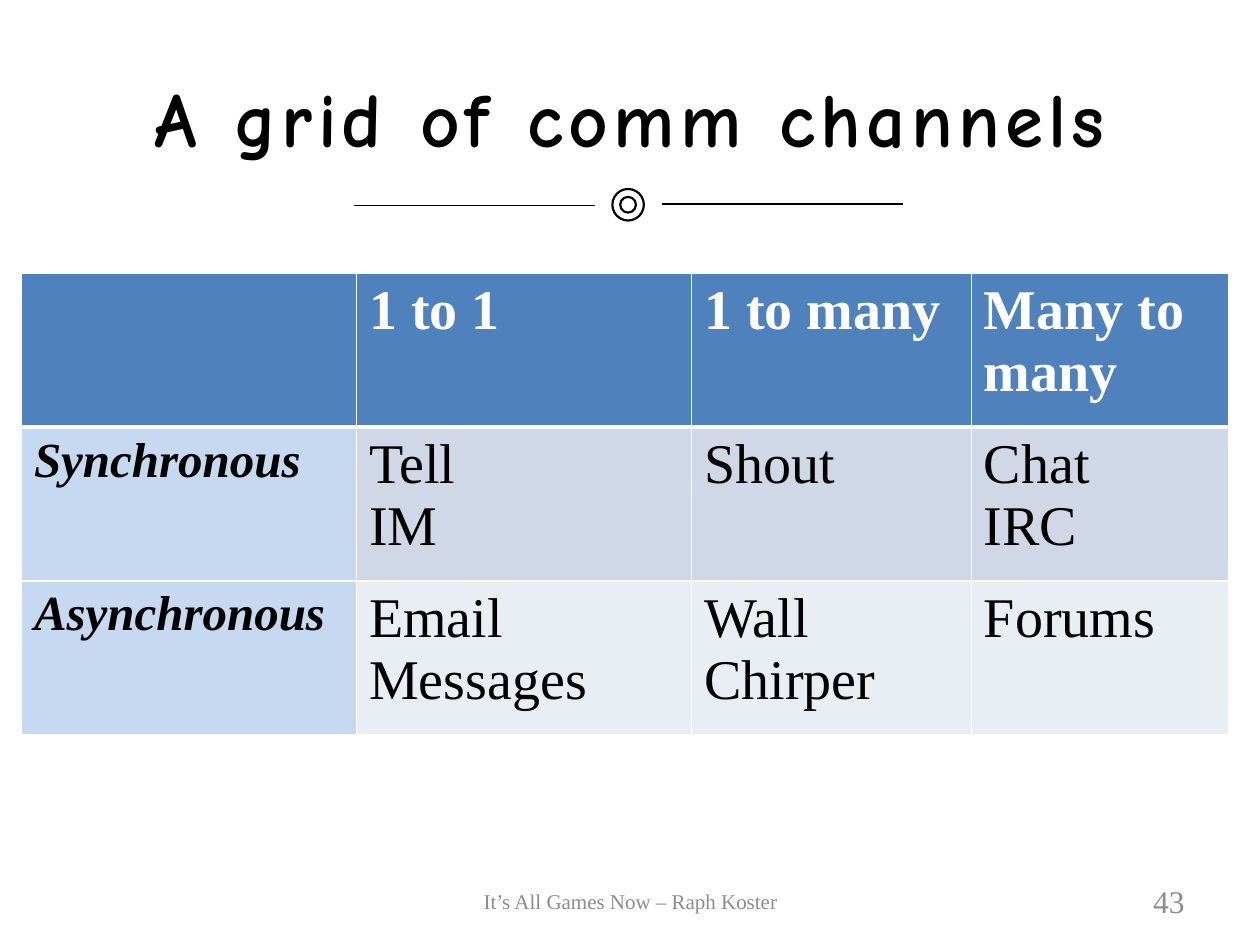
from dataclasses import dataclass

from lxml import etree
from pptx import Presentation
from pptx.dml.color import RGBColor
from pptx.enum import shapes, text
from pptx.oxml import ns
from pptx.util import Inches, Pt

BLACK = RGBColor(0x00, 0x00, 0x00)
WHITE = RGBColor(0xFF, 0xFF, 0xFF)
GREY = RGBColor(0x8C, 0x8C, 0x8C)
HEADER_BLUE = RGBColor(0x4F, 0x81, 0xBD)
LABEL_BLUE = RGBColor(0xC6, 0xD9, 0xF1)
BAND_DARK = RGBColor(0xD0, 0xD8, 0xE8)
BAND_LIGHT = RGBColor(0xE9, 0xED, 0xF4)
SERIF = "Times New Roman"

HEADER_FONT = {"name": SERIF, "size": Pt(32), "bold": True, "italic": False, "color": WHITE}
LABEL_FONT = {"name": SERIF, "size": Pt(28), "bold": True, "italic": True, "color": BLACK}
ENTRY_FONT = {"name": SERIF, "size": Pt(32), "bold": False, "italic": False, "color": BLACK}
TITLE_FONT = {"name": "Comic Neue", "size": Pt(44), "bold": True, "color": BLACK}

COLUMN_WIDTHS = (2.66, 2.66, 2.22, 2.04)
ROW_HEIGHT = 1.22
GRID = (
    ("", "1 to 1", "1 to many", "Many to many"),
    ("Synchronous", "Tell\nIM", "Shout", "Chat\nIRC"),
    ("Asynchronous", "Email\nMessages", "Wall\nChirper", "Forums"),
)
ROW_FILLS = (HEADER_BLUE, BAND_DARK, BAND_LIGHT)


@dataclass(frozen=True)
class Rule:
    left: float
    right: float
    top: float


@dataclass(frozen=True)
class FooterText:
    words: str
    left: float
    width: float
    size: int
    align: text.PP_ALIGN


RULES = (Rule(2.81, 4.72, 1.63), Rule(5.25, 7.17, 1.62))
FOOTERS = (
    FooterText("43", 7.17, 2.33, 18, text.PP_ALIGN.RIGHT),
    FooterText("It’s All Games Now – Raph Koster", 3.42, 3.17, 12, text.PP_ALIGN.CENTER),
)


def format_font(font, values: dict) -> None:
    for name, value in values.items():
        if name == "color":
            font.color.rgb = value
        else:
            setattr(font, name, value)


def add_title(page, words: str) -> None:
    title = page.shapes.title
    place = {"left": 0.5, "top": 0.3, "width": 9, "height": 1.25}
    for name, value in place.items():
        setattr(title, name, Inches(value))
    title.text_frame.vertical_anchor = text.MSO_ANCHOR.MIDDLE
    para = title.text_frame.paragraphs[0]
    para.alignment = text.PP_ALIGN.CENTER
    span = para.add_run()
    span.text = words
    format_font(span.font, TITLE_FONT)
    span.font._element.set("spc", "300")


def add_rule(page, rule: Rule) -> None:
    line = page.shapes.add_connector(
        shapes.MSO_CONNECTOR.STRAIGHT,
        Inches(rule.left), Inches(rule.top), Inches(rule.right), Inches(rule.top),
    )
    line.line.color.rgb = BLACK
    line.line.width = Pt(0.75)
    etree.SubElement(line._element.spPr, ns.qn("a:effectLst"))


def add_ring(page) -> None:
    ring = page.shapes.add_shape(
        shapes.MSO_SHAPE.DONUT, Inches(4.86), Inches(1.5), Inches(0.25), Inches(0.25)
    )
    ring.shadow.inherit = False
    ring.fill.background()
    ring.line.color.rgb = BLACK
    ring.line.width = Pt(1.25)


def add_borders(cell, top: int, bottom: int) -> None:
    properties = cell._tc.get_or_add_tcPr()
    for side, width in {"L": 1, "R": 1, "T": top, "B": bottom}.items():
        border = etree.SubElement(properties, ns.qn(f"a:ln{side}"), w=str(Pt(width)))
        fill = etree.SubElement(border, ns.qn("a:solidFill"))
        etree.SubElement(fill, ns.qn("a:srgbClr"), val=str(WHITE))


def add_grid(page) -> None:
    table = page.shapes.add_table(
        len(GRID), len(COLUMN_WIDTHS), Inches(0.17), Inches(2.17),
        Inches(sum(COLUMN_WIDTHS)), Inches(ROW_HEIGHT * len(GRID)),
    ).table
    for column, width in zip(table.columns, COLUMN_WIDTHS):
        column.width = Inches(width)
    for r, entries in enumerate(GRID):
        table.rows[r].height = Inches(ROW_HEIGHT)
        for c, words in enumerate(entries):
            cell = table.cell(r, c)
            is_label = r > 0 and c == 0
            add_borders(cell, top=3 if r == 1 else 1, bottom=3 if r == 0 else 1)
            cell.fill.solid()
            cell.fill.fore_color.rgb = LABEL_BLUE if is_label else ROW_FILLS[r]
            cell.text = words
            values = HEADER_FONT if r == 0 else LABEL_FONT if is_label else ENTRY_FONT
            for para in cell.text_frame.paragraphs:
                for span in para.runs:
                    format_font(span.font, values)


def add_footer(page, footer: FooterText) -> None:
    box = page.shapes.add_textbox(
        Inches(footer.left), Inches(6.95), Inches(footer.width), Inches(0.4)
    )
    frame = box.text_frame
    frame.word_wrap = True
    frame.vertical_anchor = text.MSO_ANCHOR.MIDDLE
    para = frame.paragraphs[0]
    para.alignment = footer.align
    span = para.add_run()
    span.text = footer.words
    format_font(span.font, {"name": SERIF, "size": Pt(footer.size), "color": GREY})


def main() -> None:
    deck = Presentation()
    deck.slide_width, deck.slide_height = Inches(10), Inches(7.5)
    page = deck.slides.add_slide(deck.slide_layouts[5])
    add_ring(page)
    for rule in RULES:
        add_rule(page, rule)
    add_title(page, "A grid of comm channels")
    add_grid(page)
    for footer in FOOTERS:
        add_footer(page, footer)
    deck.save("out.pptx")


if __name__ == "__main__":
    main()
